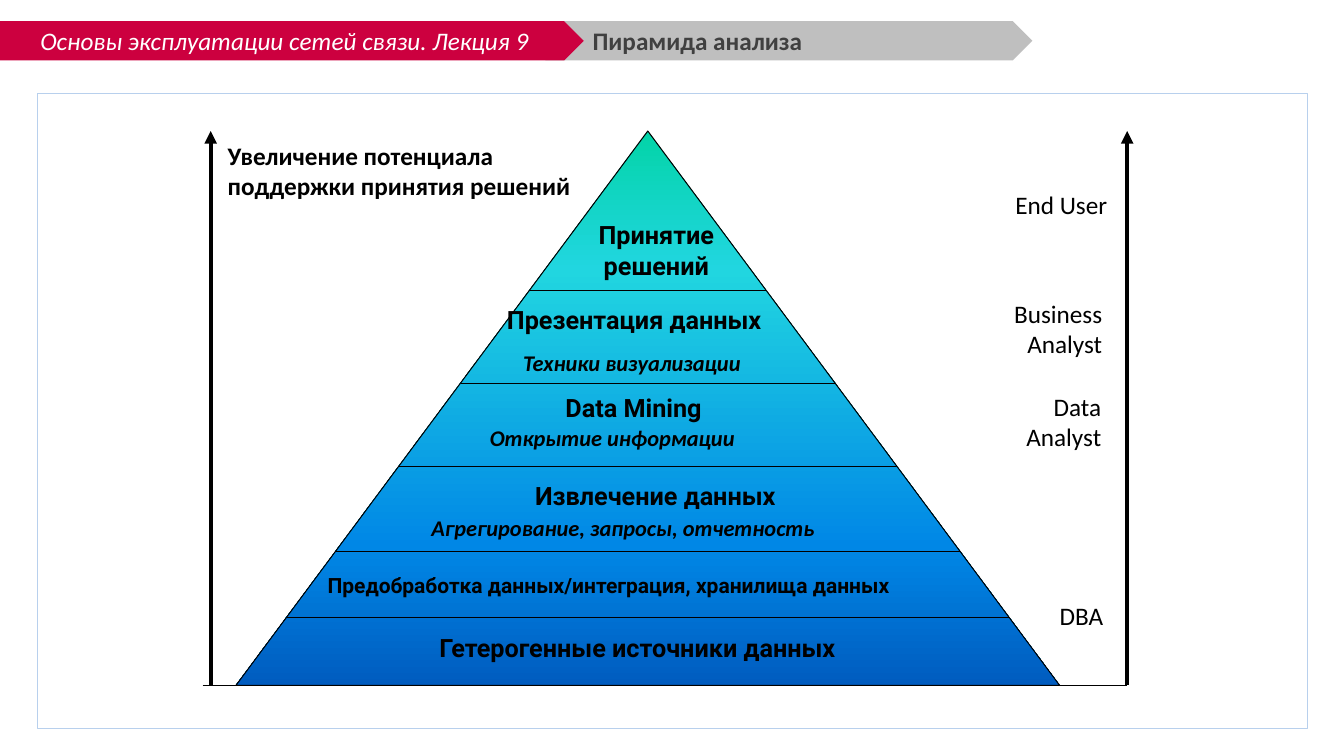
from lxml import etree
from pptx import Presentation, util as u
from pptx.dml.color import RGBColor
from pptx.enum import shapes, text
from pptx.oxml import parse_xml
from pptx.oxml.ns import qn, nsdecls

I = u.Inches
MSO = shapes.MSO_SHAPE
LEFT, MID, RIGHT = text.PP_ALIGN.LEFT, text.PP_ALIGN.CENTER, text.PP_ALIGN.RIGHT


def rgb(hex):
    return RGBColor.from_string(hex)


def write(box, lines, font, size, color, bold=False, italic=False, align=LEFT):
    frame = box.text_frame
    frame.word_wrap = True
    for n, line in enumerate(lines):
        para = frame.add_paragraph() if n else frame.paragraphs[0]
        para.alignment = align
        run = para.add_run()
        run.text = line
        run.font.name = font
        run.font.size = u.Pt(size)
        run.font.bold = bold
        run.font.italic = italic
        run.font.color.rgb = rgb(color)


deck = Presentation()
deck.slide_width, deck.slide_height = I(13.33), I(7.5)
slide = deck.slides.add_slide(deck.slide_layouts[6])
items = slide.shapes

bars = []
for kind, x, y, w, h, fill, edge in [
    (MSO.PENTAGON, 5.41, 0.21, 4.83, 0.39, "BFBFBF", None),
    (MSO.RECTANGLE, 0.37, 0.92, 12.6, 6.3, None, "B8D0ED"),
    (MSO.PENTAGON, -0.05, 0.21, 5.84, 0.39, "CC003F", None),
]:
    bar = items.add_shape(kind, I(x), I(y), I(w), I(h))
    bar.shadow.inherit = False
    if fill:
        bar.fill.solid()
        bar.fill.fore_color.rgb = rgb(fill)
    else:
        bar.fill.background()
    if edge:
        bar.line.color.rgb = rgb(edge)
        bar.line.width = u.Pt(0.25)
    else:
        bar.line.fill.background()
    bars.append(bar)
write(bars[2], ["Основы эксплуатации сетей связи. Лекция 9"], "Calibri", 18, "FFFFFF",
      italic=True, align=MID)

title = items.add_textbox(I(5.78), I(0.21), I(4.14), I(0.39))
title.text_frame.vertical_anchor = text.MSO_ANCHOR.MIDDLE
write(title, ["Пирамида анализа"], "Calibri", 18, "404040", bold=True)

left, top, wide, high = 2.34, 1.3, 8.17, 5.5
base, axis = top + high, left + wide / 2
cone = items.add_shape(MSO.FLOWCHART_EXTRACT, I(left), I(top), I(wide), I(high))
cone.shadow.inherit = False
cone.line.color.rgb = rgb("000000")
cone.line.width = u.Pt(0.75)
stops = [(0, "03D4A8"), (25, "21D6E0"), (75, "0087E6"), (100, "005CBF")]
marks = "".join(
    f'<a:gs pos="{pos * 1000}"><a:srgbClr val="{hue}"/></a:gs>' for pos, hue in stops)
grad = parse_xml(f'<a:gradFill {nsdecls("a")} rotWithShape="1"><a:gsLst>{marks}</a:gsLst>'
                 '<a:lin ang="5400000" scaled="0"/></a:gradFill>')
cone._element.spPr.find(qn("a:prstGeom")).addnext(grad)

lines = []
for y in [6.13, 5.47, 4.63, 3.8, 2.88]:
    half = wide / 2 * (y - top) / high
    lines.append((axis - half, y, axis + half, y, 0.75))
lines += [(x, base, x, top, 3) for x in (2.09, 11.18)]
lines.append((2.01, base, 11.18, base, 0.75))
for x1, y1, x2, y2, width in lines:
    rule = items.add_connector(shapes.MSO_CONNECTOR.STRAIGHT, I(x1), I(y1), I(x2), I(y2))
    rule.line.color.rgb = rgb("000000")
    rule.line.width = u.Pt(width)
    if width == 3:
        etree.SubElement(rule.line._get_or_add_ln(), qn("a:tailEnd"), type="triangle")
    etree.SubElement(rule._element.spPr, qn("a:effectLst"))

for x, y, w, h, words in [
    (9.84, 1.83, 1.24, 0.4, ["End User"]),
    (9.81, 2.91, 1.22, 0.7, ["Business", "Analyst"]),
    (10, 3.83, 1.02, 0.7, ["Data", "Analyst"]),
    (10.32, 5.91, 0.72, 0.4, ["DBA"]),
]:
    role = items.add_textbox(I(x), I(y), I(w), I(h))
    write(role, words, "Calibri", 18, "000000", align=RIGHT)

for x, y, w, h, words, font, size, align in [
    (2.16, 1.34, 3.99, 0.7, ["Увеличение потенциала", "поддержки принятия решений"],
     "Calibri", 18, LEFT),
    (5.51, 2.13, 2, 0.7, ["Принятие решений"], "Roboto", 18, MID),
    (4.93, 2.97, 2.98, 0.4, ["Презентация данных"], "Roboto", 18, LEFT),
    (5.09, 3.41, 2.72, 0.37, ["Техники визуализации"], "Calibri", 16, LEFT),
    (5.51, 3.84, 1.95, 0.4, ["Data Mining"], "Roboto", 18, LEFT),
    (4.76, 4.16, 2.97, 0.37, ["Открытие информации"], "Calibri", 16, LEFT),
    (4.84, 4.72, 3.32, 0.4, ["Извлечение данных"], "Roboto", 18, MID),
    (4.18, 5.05, 5, 0.37, ["Агрегирование, запросы, отчетность"], "Calibri", 16, LEFT),
    (3.15, 5.63, 6.49, 0.35, ["Предобработка данных/интеграция, хранилища данных"],
     "Roboto", 15, LEFT),
    (4.26, 6.22, 4.57, 0.4, ["Гетерогенные источники данных"], "Roboto", 18, LEFT),
]:
    label = items.add_textbox(I(x), I(y), I(w), I(h))
    write(label, words, font, size, "000000", bold=True, italic=size == 16, align=align)

deck.save("out.pptx")
